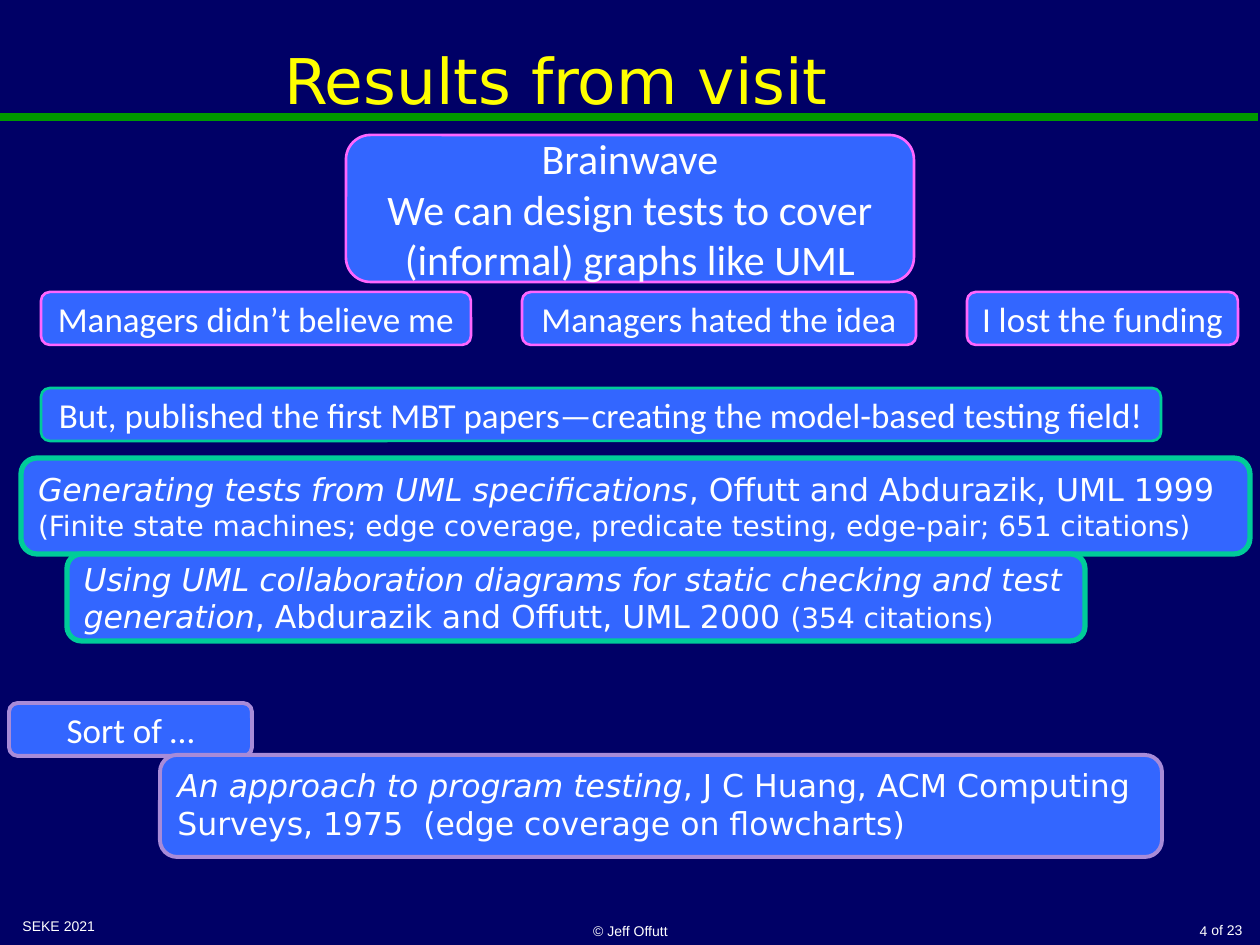
from dataclasses import dataclass

from lxml import etree
from pptx import Presentation
from pptx.dml.color import RGBColor
from pptx.enum import shapes, text
from pptx.oxml import ns
from pptx.util import Emu, Pt

EMU_PER_PX = 914400 / 126

NAVY = RGBColor(0x00, 0x00, 0x66)
GREEN = RGBColor(0x00, 0x99, 0x00)
YELLOW = RGBColor(0xFF, 0xFF, 0x00)
WHITE = RGBColor(0xFF, 0xFF, 0xFF)
BLUE = RGBColor(0x33, 0x66, 0xFF)
PINK = RGBColor(0xFF, 0x66, 0xFF)
TEAL = RGBColor(0x00, 0xCC, 0x99)
LILAC = RGBColor(0xA8, 0x8B, 0xD8)

SANS, LABEL, SMALL = "DejaVu Sans", "Calibri", "Arial"
LEFT, CENTER, RIGHT = (text.PP_ALIGN.LEFT, text.PP_ALIGN.CENTER,
                       text.PP_ALIGN.RIGHT)
TOP, MIDDLE, BOTTOM = (text.MSO_ANCHOR.TOP, text.MSO_ANCHOR.MIDDLE,
                       text.MSO_ANCHOR.BOTTOM)


@dataclass(frozen=True)
class Run:
    words: str
    size: int
    font: str = SANS
    italic: bool = False
    color: RGBColor = WHITE


@dataclass(frozen=True)
class Box:
    """Text in a place given in px; a border makes it a rounded blue box."""
    place: tuple[int, int, int, int]
    paragraphs: list[list[Run]]
    align: text.PP_ALIGN = LEFT
    anchor: text.MSO_ANCHOR = MIDDLE
    border: RGBColor | None = None
    weight: float = 1.5
    wrap: bool = True


def label(left: int, top: int, width: int, words: str, border: RGBColor,
          weight: float = 1.5) -> Box:
    """One-line box of the common height."""
    return Box((left, top, width, 53), [[Run(words, 20, LABEL)]], CENTER,
               border=border, weight=weight, wrap=False)


def footer(left: int, top: int, width: int, words: str,
           align: text.PP_ALIGN, anchor: text.MSO_ANCHOR) -> Box:
    return Box((left, top, width, 34), [[Run(words, 8, SMALL)]], align, anchor)


CLAIM_TOP = 292
TEXTS = [
    Box((10, 0, 1092, 158),
        [[Run("Results from visit", 36, color=YELLOW)]], CENTER),
    footer(1197, 915, 58, "of 23", RIGHT, TOP),
    footer(10, 911, 294, "SEKE 2021", LEFT, TOP),
    footer(431, 911, 399, "© Jeff Offutt", CENTER, BOTTOM),
    footer(992, 911, 228, "4", RIGHT, BOTTOM),
    Box((346, 135, 568, 147),
        [[Run("Brainwave", 24, LABEL)],
         [Run("We can design tests to cover (informal) graphs like UML",
              24, LABEL)]],
        CENTER, border=PINK),
    label(41, CLAIM_TOP, 430, "Managers didn’t believe me", PINK),
    label(522, CLAIM_TOP, 394, "Managers hated the idea", PINK),
    label(967, CLAIM_TOP, 271, "I lost the funding", PINK),
    Box((21, 458, 1229, 96),
        [[Run("Generating tests from UML specifications", 18, italic=True),
          Run(", Offutt and Abdurazik, UML 1999", 18)],
         [Run("(Finite state machines; edge coverage, predicate testing, "
              "edge-pair; 651 citations)", 16)]],
        border=TEAL, weight=3),
    Box((67, 554, 1018, 87),
        [[Run("Using UML collaboration diagrams for static checking and "
              "test generation", 18, italic=True),
          Run(", Abdurazik and Offutt, UML 2000 ", 18),
          Run("(354 citations)", 16)]],
        border=TEAL, weight=3),
    label(41, 388, 1120,
          "But, published the first MBT papers—creating the model-based "
          "testing field!", TEAL),
    label(9, 703, 243, "Sort of …", LILAC, 2.25),
    Box((160, 755, 1002, 102),
        [[Run("An approach to program testing", 18, italic=True),
          Run(", J C Huang, ACM Computing Surveys, 1975  (edge coverage on "
              "flowcharts)", 18)]],
        anchor=TOP, border=LILAC, weight=2.25),
]


def px(n: int) -> Emu:
    return Emu(round(n * EMU_PER_PX))


def draw_rule(s, y: int, width: int) -> None:
    line = s.shapes.add_connector(shapes.MSO_CONNECTOR.STRAIGHT,
                                  px(0), px(y), px(width), px(y))
    line.line.color.rgb = GREEN
    line.line.width = Pt(4.5)
    etree.SubElement(line._element.spPr, ns.qn("a:effectLst"))


def draw_box(s, box: Box) -> None:
    place = [px(n) for n in box.place]
    if box.border is None:
        sp = s.shapes.add_textbox(*place)
    else:
        sp = s.shapes.add_shape(shapes.MSO_SHAPE.ROUNDED_RECTANGLE, *place)
        sp.shadow.inherit = False
        sp.fill.solid()
        sp.fill.fore_color.rgb = BLUE
        sp.line.color.rgb = box.border
        sp.line.width = Pt(box.weight)
    tf = sp.text_frame
    tf.word_wrap = box.wrap
    tf.vertical_anchor = box.anchor
    for i, runs in enumerate(box.paragraphs):
        p = tf.add_paragraph() if i else tf.paragraphs[0]
        p.alignment = box.align
        for run in runs:
            r = p.add_run()
            r.text = run.words
            r.font.name = run.font
            r.font.size = Pt(run.size)
            r.font.italic = run.italic
            r.font.color.rgb = run.color


def main() -> None:
    prs = Presentation()
    prs.slide_width, prs.slide_height = px(1260), px(945)
    s = prs.slides.add_slide(prs.slide_layouts[6])
    s.background.fill.solid()
    s.background.fill.fore_color.rgb = NAVY
    draw_rule(s, 117, 1258)
    for box in TEXTS:
        draw_box(s, box)
    prs.save("out.pptx")


if __name__ == "__main__":
    main()
